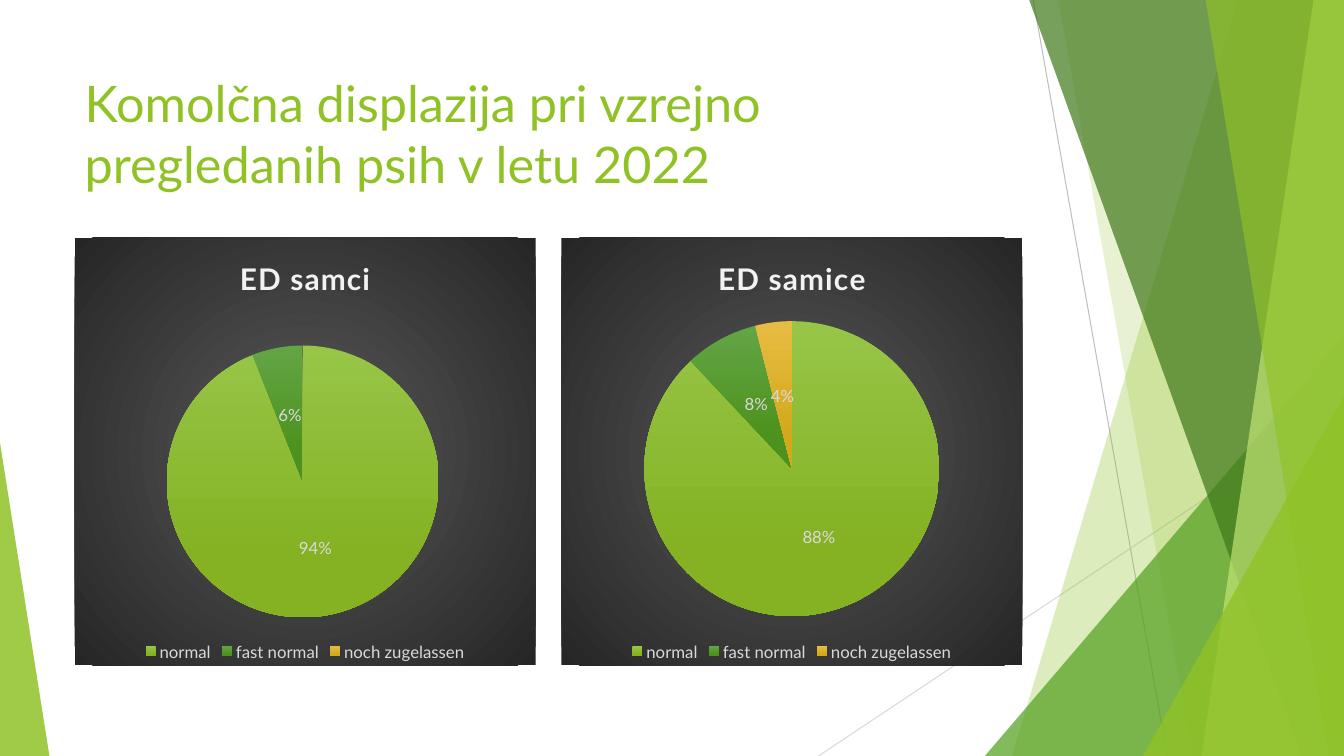
from lxml import etree
from pptx import Presentation
from pptx.chart.data import CategoryChartData
from pptx.dml.color import RGBColor
from pptx.enum.chart import XL_CHART_TYPE, XL_LABEL_POSITION, XL_LEGEND_POSITION
from pptx.enum.shapes import MSO_CONNECTOR, MSO_SHAPE
from pptx.enum.text import MSO_ANCHOR, PP_ALIGN
from pptx.oxml import parse_xml
from pptx.oxml.ns import qn
from pptx.util import Inches, Pt

PIE = XL_CHART_TYPE.PIE
CENTER = XL_LABEL_POSITION.CENTER
BOTTOM = XL_LEGEND_POSITION.BOTTOM
STRAIGHT = MSO_CONNECTOR.STRAIGHT
TRIANGLE = MSO_SHAPE.ISOSCELES_TRIANGLE
TOP, LEFT = MSO_ANCHOR.TOP, PP_ALIGN.LEFT

W, H = Inches(13.33), Inches(7.5)
FONT = "Lato"
COLORS = {
    "lime": "90C226", "green": "54A021", "forest": "3F7819", "pale": "C0E474",
    "line_dark": "BFBFBF", "line_light": "D9D9D9",
    "chart_title": "F2F2F2", "chart_text": "D9D9D9",
}
SLICES = [("97C547", "84B223"), ("63A545", "4D921E"), ("E7BC43", "D2A91B")]
PANEL = ("595959", "262626")
CATEGORIES = ["normal", "fast normal", "noch zugelassen"]
CHARTS = [
    ("ED samci", (94, 6, 0), (0.2, 0.25, 0.59, 0.64)),
    ("ED samice", (88, 8, 4), (0.18, 0.19, 0.64, 0.7)),
]
CHART_LEFT, CHART_TOP, CHART_PITCH = 5.55, 31.47, 36.22
CHART_WIDTH, CHART_HEIGHT = 34.3, 56.53
NS = ('xmlns:a="http://schemas.openxmlformats.org/drawingml/2006/main" '
      'xmlns:c="http://schemas.openxmlformats.org/drawingml/2006/chart"')


def px(percent):
    return int(W * percent / 100)


def py(percent):
    return int(H * percent / 100)


def rgb(name):
    return RGBColor.from_string(COLORS[name])


def style_font(font, **values):
    font.color.rgb = rgb(values.pop("color"))
    for name, value in {"name": FONT, **values}.items():
        setattr(font, name, value)


def paint(sp, color, opacity):
    sp.shadow.inherit = False
    sp.fill.solid()
    sp.fill.fore_color.rgb = rgb(color)
    sp.line.fill.background()
    clr = sp._element.spPr.find(qn("a:solidFill"))[0]
    etree.SubElement(clr, qn("a:alpha"), val=str(opacity * 1000))


def add_ray(s, start, end, color):
    line = s.shapes.add_connector(
        STRAIGHT, px(start[0]), py(start[1]), px(end[0]), py(end[1]))
    line.line.color.rgb = rgb(color)
    line.line.width = Pt(0.75)
    etree.SubElement(line._element.spPr, qn("a:effectLst"))


def add_band(s, top_x, bottom_x, color, opacity):
    builder = s.shapes.build_freeform(px(top_x), 0)
    builder.add_line_segments([(W, 0), (W, H), (px(bottom_x), H)])
    paint(builder.convert_to_shape(), color, opacity)


def add_corner(s, left, right, top, apex, color, opacity):
    sp = s.shapes.add_shape(
        TRIANGLE, px(left), py(top), px(right - left), py(100 - top))
    sp.adjustments[0] = apex
    paint(sp, color, opacity)


def add_title(s, text):
    title = s.shapes.title
    title.left, title.top, title.width, title.height = (
        px(5.55), py(8.93), px(70.5), py(19.2))
    tf = title.text_frame
    tf.text = text
    tf.word_wrap = True
    tf.vertical_anchor = TOP
    p = tf.paragraphs[0]
    p.alignment = LEFT
    style_font(p.runs[0].font, size=Pt(36), color="lime")


def gradient(colors, end, direction):
    stops = "".join(
        f'<a:gs pos="{pos * 1000}"><a:srgbClr val="{c}"/></a:gs>'
        for pos, c in zip((0, end), colors))
    return f"<a:gradFill><a:gsLst>{stops}</a:gsLst>{direction}</a:gradFill>"


def fill_panel(chart):
    circle = ('<a:path path="circle">'
              '<a:fillToRect l="50000" t="50000" r="50000" b="50000"/></a:path>')
    sp_pr = parse_xml(f"<c:spPr {NS}>{gradient(PANEL, 100, circle)}"
                      "<a:ln><a:noFill/></a:ln></c:spPr>")
    chart._chartSpace.find(qn("c:chart")).addnext(sp_pr)


def place_pie(chart, box):
    area = chart._chartSpace.find(f".//{qn('c:plotArea')}")
    for old in area.findall(qn("c:layout")):
        area.remove(old)
    sizes = "".join(f'<c:{k} val="{v}"/>' for k, v in zip("xywh", box))
    area.insert(0, parse_xml(
        f'<c:layout {NS}><c:manualLayout><c:layoutTarget val="inner"/>'
        f'<c:xMode val="edge"/><c:yMode val="edge"/>{sizes}'
        "</c:manualLayout></c:layout>"))


def fill_slices(series):
    for i, colors in enumerate(SLICES):
        fmt = series.points[i].format
        fmt.line.fill.background()
        sp_pr = fmt.fill._xPr
        sp_pr.insert(0, parse_xml(
            gradient(colors, 78, '<a:lin ang="5400000" scaled="0"/>')
            .replace("<a:gradFill>", f"<a:gradFill {NS}>")))


def label_slices(series, values):
    labels = series.data_labels
    for name, value in {"show_percentage": True, "show_value": False,
                        "show_legend_key": False, "position": CENTER,
                        "number_format": "0%",
                        "number_format_is_linked": False}.items():
        setattr(labels, name, value)
    style_font(labels.font, size=Pt(12), color="chart_text")
    hidden = [i for i, value in enumerate(values) if value == 0]
    for n, i in enumerate(hidden):
        labels._element.insert(n, parse_xml(
            f'<c:dLbl {NS}><c:idx val="{i}"/><c:delete val="1"/></c:dLbl>'))


def add_pie(s, column, name, values, box):
    data = CategoryChartData()
    data.categories = CATEGORIES
    data.add_series(name, values)
    chart = s.shapes.add_chart(
        PIE, px(CHART_LEFT + column * CHART_PITCH), py(CHART_TOP),
        px(CHART_WIDTH), py(CHART_HEIGHT), data).chart
    style_font(chart.font, size=Pt(10), color="chart_text")
    chart.has_title = True
    p = chart.chart_title.text_frame.paragraphs[0]
    r = p.add_run()
    r.text = name
    style_font(r.font, size=Pt(21.3), bold=True, color="chart_title")
    r._r.get_or_add_rPr().set("spc", "100")
    chart.has_legend = True
    chart.legend.position = BOTTOM
    chart.legend.include_in_layout = False
    style_font(chart.legend.font, size=Pt(12), color="chart_text")
    plot = chart.plots[0]
    plot.vary_by_categories = True
    fill_slices(plot.series[0])
    label_slices(plot.series[0], values)
    fill_panel(chart)
    place_pie(chart, box)


def add_backdrop(s):
    add_ray(s, (76.88, 0), (86.85, 100), "line_dark")
    add_ray(s, (100, 53.73), (60.9, 100), "line_light")
    add_band(s, 92.1, 75.3, "lime", 30)
    add_band(s, 78.75, 88.73, "lime", 20)
    add_corner(s, 73.28, 100, 44.4, 1, "green", 72)
    add_band(s, 76.58, 96.83, "forest", 70)
    add_band(s, 97.73, 89.4, "pale", 70)
    add_band(s, 89.7, 98.85, "lime", 65)
    add_corner(s, 85.05, 100, 52.4, 1, "lime", 80)
    add_corner(s, 0, 3.68, 58.53, 0, "lime", 85)


def main():
    prs = Presentation()
    prs.slide_width, prs.slide_height = W, H
    s = prs.slides.add_slide(prs.slide_layouts[5])
    add_backdrop(s)
    add_title(s, "Komolčna displazija pri vzrejno pregledanih psih v letu 2022")
    for column, (name, values, box) in enumerate(CHARTS):
        add_pie(s, column, name, values, box)
    prs.save("out.pptx")


if __name__ == "__main__":
    main()
